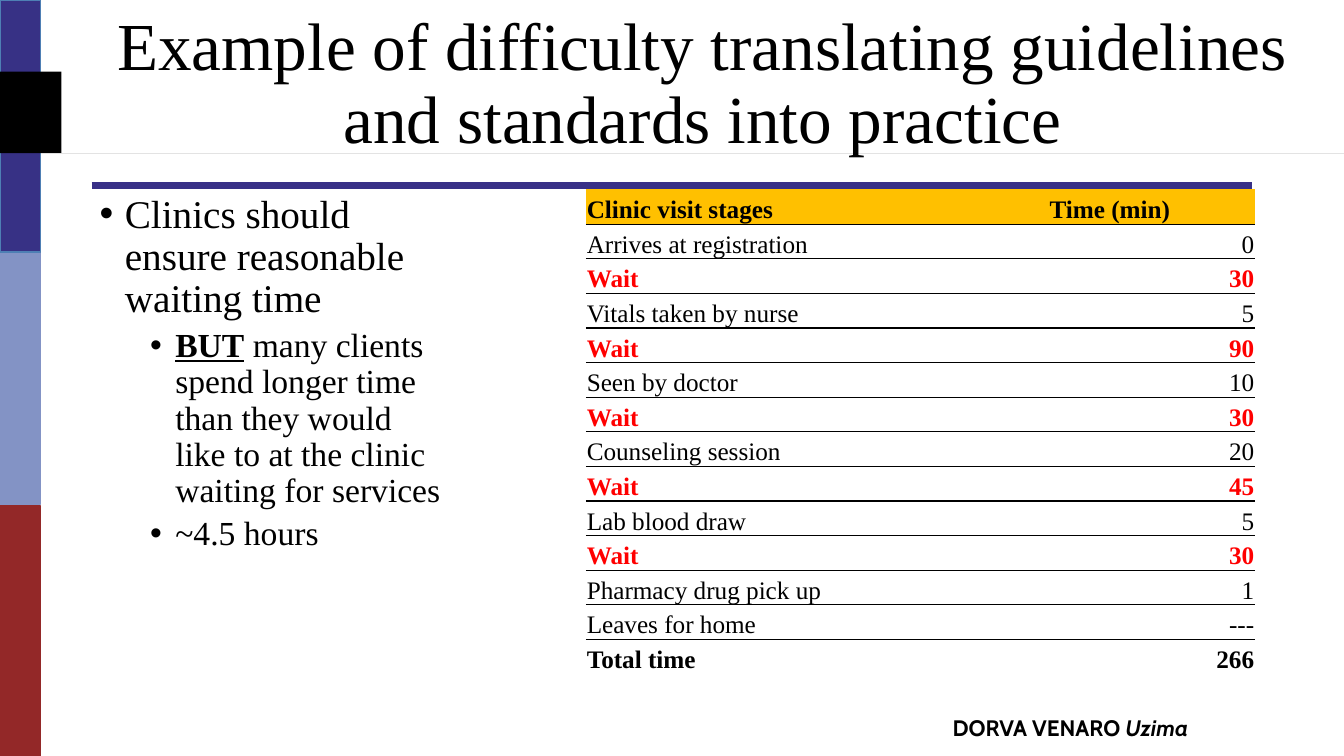
from dataclasses import dataclass

from lxml.etree import SubElement
from pptx import Presentation
from pptx.dml.color import RGBColor
from pptx.enum.shapes import MSO_CONNECTOR as Connector, MSO_SHAPE as Shape
from pptx.enum.text import MSO_ANCHOR as Anchor, PP_ALIGN as Align
from pptx.oxml import parse_xml
from pptx.oxml.ns import nsdecls, qn
from pptx.util import Inches, Pt


@dataclass(frozen=True)
class Theme:
    serif: str = "Times New Roman"
    sans: str = "Cabin"
    black: str = "000000"
    white: str = "FFFFFF"
    navy: str = "373185"
    navy_edge: str = "4E7FB4"
    rule: str = "383087"
    periwinkle: str = "8393C5"
    brick: str = "932828"
    amber: str = "FFC000"
    red: str = "FF0000"
    title_size: int = 48
    bullet_size: int = 28
    sub_bullet_size: int = 24
    table_size: int = 18
    footer_size: int = 16


THEME = Theme()
NO_STYLE_NO_GRID = "{2D5ABB26-0587-4C30-8999-92F81FD0307C}"

VISIT_STAGES = [
    ("Clinic visit stages", "Time (min)"),
    ("Arrives at registration", "0"),
    ("Wait", "30"),
    ("Vitals taken by nurse", "5"),
    ("Wait", "90"),
    ("Seen by doctor", "10"),
    ("Wait", "30"),
    ("Counseling session", "20"),
    ("Wait", "45"),
    ("Lab blood draw", "5"),
    ("Wait", "30"),
    ("Pharmacy drug pick up", "1"),
    ("Leaves for home", "---"),
    ("Total time", "266"),
]


def rgb(color):
    return RGBColor.from_string(color)


def add_run(paragraph, text, size, font=THEME.serif, color=THEME.black,
            bold=False, italic=False, underline=False):
    run = paragraph.add_run()
    run.text = text
    run.font.name = font
    run.font.size = Pt(size)
    run.font.color.rgb = rgb(color)
    run.font.bold = bold
    run.font.italic = italic
    run.font.underline = underline


def add_block(slide, left, top, width, height, fill, edge=None):
    block = slide.shapes.add_shape(
        Shape.RECTANGLE, Inches(left), Inches(top), Inches(width), Inches(height))
    block.shadow.inherit = False
    block.fill.solid()
    block.fill.fore_color.rgb = rgb(fill)
    if edge:
        block.line.color.rgb = rgb(edge)
        block.line.width = Pt(1)
    else:
        block.line.fill.background()
    return block


def add_text_box(slide, left, top, width, height):
    box = slide.shapes.add_textbox(
        Inches(left), Inches(top), Inches(width), Inches(height))
    box.text_frame.word_wrap = True
    return box.text_frame


def add_rule(slide, left, right, y):
    rule = slide.shapes.add_connector(
        Connector.STRAIGHT, Inches(left), Inches(y), Inches(right), Inches(y))
    rule.line.color.rgb = rgb(THEME.rule)
    rule.line.width = Pt(4.5)
    SubElement(rule._element.spPr, qn("a:effectLst"))


def add_title(slide, text):
    title = add_block(slide, 0.61, 0.17, 12.72, 1.35, THEME.white)
    frame = title.text_frame
    frame.word_wrap = True
    frame.vertical_anchor = Anchor.MIDDLE
    paragraph = frame.paragraphs[0]
    paragraph.alignment = Align.CENTER
    paragraph.line_spacing = 0.9
    add_run(paragraph, text, THEME.title_size)


def make_bullet(paragraph, indent):
    paragraph.line_spacing = 0.9
    properties = paragraph._p.get_or_add_pPr()
    properties.set("marL", str(Inches(indent)))
    properties.set("indent", str(Inches(-0.25)))
    color = SubElement(properties, qn("a:buClr"))
    SubElement(color, qn("a:srgbClr"), val=THEME.black)
    SubElement(properties, qn("a:buFont"), typeface="Arial")
    SubElement(properties, qn("a:buChar"), char="•")


def add_sub_bullet(frame):
    paragraph = frame.add_paragraph()
    paragraph.level = 1
    paragraph.space_before = Pt(5)
    make_bullet(paragraph, 0.75)
    return paragraph


def add_waiting_points(slide):
    frame = add_text_box(slide, 0.89, 1.88, 3.58, 4.83)
    goal = frame.paragraphs[0]
    make_bullet(goal, 0.25)
    add_run(goal, "Clinics should ensure reasonable waiting time", THEME.bullet_size)
    reality = add_sub_bullet(frame)
    add_run(reality, "BUT", THEME.sub_bullet_size, bold=True, underline=True)
    add_run(reality, " many clients spend longer time than they would like to at "
            "the clinic waiting for services", THEME.sub_bullet_size)
    add_run(add_sub_bullet(frame), "~4.5 hours", THEME.sub_bullet_size)


def underline_cell(cell):
    """Draw a thin black border along the bottom of the cell."""
    border = parse_xml(
        f'<a:lnB {nsdecls("a")} w="{Pt(1)}"><a:solidFill>'
        f'<a:srgbClr val="{THEME.black}"/></a:solidFill></a:lnB>')
    cell._tc.get_or_add_tcPr().insert(0, border)


def add_stage_table(slide):
    last = len(VISIT_STAGES) - 1
    table = slide.shapes.add_table(
        len(VISIT_STAGES), 2, Inches(5.81), Inches(1.88),
        Inches(6.64), Inches(4.81)).table
    table._tbl.tblPr.find(qn("a:tableStyleId")).text = NO_STYLE_NO_GRID
    table.first_row = table.horz_banding = False
    for column, width in zip(table.columns, (4.59, 2.05)):
        column.width = Inches(width)

    for row, stage in enumerate(VISIT_STAGES):
        is_wait = stage[0] == "Wait"
        for column, text in enumerate(stage):
            cell = table.cell(row, column)
            cell.margin_left = cell.margin_right = cell.margin_top = Inches(0.01)
            cell.margin_bottom = 0
            cell.vertical_anchor = Anchor.BOTTOM
            if row == 0:
                cell.fill.solid()
                cell.fill.fore_color.rgb = rgb(THEME.amber)
            else:
                cell.fill.background()
            if row < last:
                underline_cell(cell)
            paragraph = cell.text_frame.paragraphs[0]
            paragraph.alignment = Align.RIGHT if row and column else Align.LEFT
            add_run(paragraph, text, THEME.table_size,
                    color=THEME.red if is_wait else THEME.black,
                    bold=is_wait or row in (0, last))


def add_footer(slide):
    paragraph = add_text_box(slide, 9.35, 7.04, 3.83, 0.36).paragraphs[0]
    add_run(paragraph, "DORVA VENARO ", THEME.footer_size, THEME.sans, bold=True)
    add_run(paragraph, "Uzima", THEME.footer_size, THEME.sans, bold=True, italic=True)


def main():
    deck = Presentation()
    deck.slide_width, deck.slide_height = Inches(13.33), Inches(7.5)
    slide = deck.slides.add_slide(deck.slide_layouts[6])

    add_block(slide, 0, 2.5, 0.4, 2.5, THEME.periwinkle, THEME.periwinkle)
    add_block(slide, 0, 5.02, 0.4, 2.48, THEME.brick, THEME.brick)
    add_block(slide, 0, 0, 0.4, 2.5, THEME.navy, THEME.navy_edge)
    add_rule(slide, 0.91, 12.42, 1.84)
    add_footer(slide)
    add_block(slide, 0, 0.71, 13.33, 0.81, THEME.black)
    add_title(slide, "Example of difficulty translating guidelines "
                     "and standards into practice")
    add_waiting_points(slide)
    add_stage_table(slide)

    deck.save("out.pptx")


if __name__ == "__main__":
    main()
